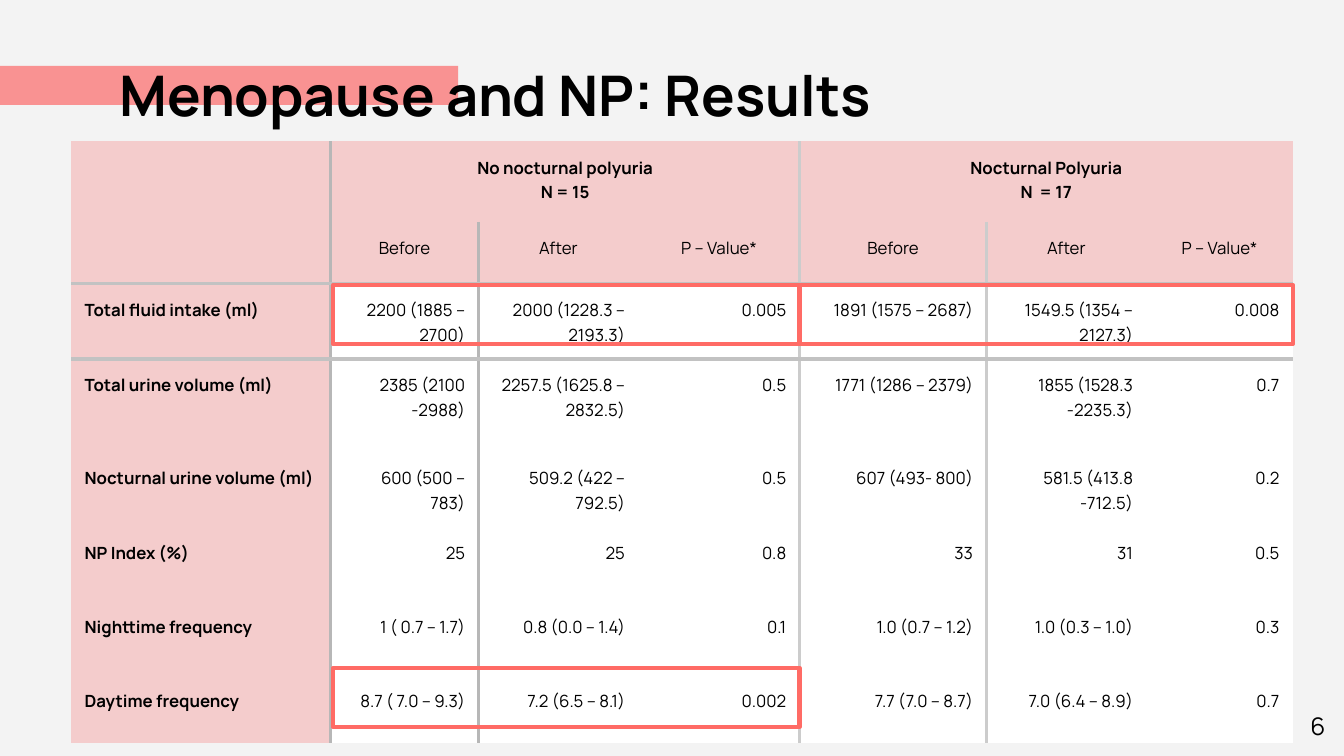
import pptx
import pptx.dml.color
import pptx.enum.shapes
import pptx.enum.text
import pptx.oxml
import pptx.oxml.ns
import pptx.util
from pptx.util import Inches

COLORS = {
    "background": "F3F3F3", "accent": "FF3D3D", "text": "000000",
    "label": "F4CCCC", "value": "FFFFFF", "highlight": "FF6B65",
    "left_rule": "B7B7B7", "right_rule": "CCCCCC", "row_rule": "C2C2C2",
}
FONT = "Manrope"
ALIGN = pptx.enum.text.PP_ALIGN
ANCHOR = pptx.enum.text.MSO_ANCHOR
COLUMN_WIDTHS = [1.93, 1.1, 1.19, 1.2, 1.39, 1.19, 1.09]
ROW_HEIGHTS = [0.6, 0.46, 0.56, 0.69, 0.56, 0.55, 0.55, 0.51]
RESULTS = [
    ["", "No nocturnal polyuria\nN = 15", "", "", "Nocturnal Polyuria\nN  = 17", "", ""],
    [""] + ["Before", "After", "P – Value*"] * 2,
    ["Total fluid intake (ml)", "2200 (1885 – 2700)", "2000 (1228.3 – 2193.3)", "0.005",
     "1891 (1575 – 2687)", "1549.5 (1354 – 2127.3)", "0.008"],
    ["Total urine volume (ml)", "2385 (2100 -2988)", "2257.5 (1625.8 – 2832.5)", "0.5",
     "1771 (1286 – 2379)", "1855 (1528.3 -2235.3)", "0.7"],
    ["Nocturnal urine volume (ml)", "600 (500 – 783)", "509.2 (422 – 792.5)", "0.5",
     "607 (493- 800)", "581.5 (413.8 -712.5)", "0.2"],
    ["NP Index (%)", "25", "25", "0.8", "33", "31", "0.5"],
    ["Nighttime frequency", "1 ( 0.7 – 1.7)", "0.8 (0.0 – 1.4)", "0.1",
     "1.0 (0.7 – 1.2)", "1.0 (0.3 – 1.0)", "0.3"],
    ["Daytime frequency", "8.7 ( 7.0 – 9.3)", "7.2 (6.5 – 8.1)", "0.002",
     "7.7 (7.0 – 8.7)", "7.0 (6.4 – 8.9)", "0.7"],
]
COLUMN_RULES = {0: "left_rule", 3: "right_rule"}
ROW_RULES = {1: "row_rule"}


def rgb(name):
    return pptx.dml.color.RGBColor.from_string(COLORS[name])


def write(frame, text, size, bold=False, align=ALIGN.LEFT, spacing=None):
    frame.text = text
    frame.word_wrap = True
    for paragraph in frame.paragraphs:
        paragraph.alignment = align
        paragraph.line_spacing = spacing
        for run in paragraph.runs:
            run.font.name = FONT
            run.font.size = pptx.util.Pt(size)
            run.font.bold = bold
            run.font.color.rgb = rgb("text")


def add_text(slide, box, text, size, bold=False, align=ALIGN.LEFT, anchor=ANCHOR.TOP):
    frame = slide.shapes.add_textbox(*map(Inches, box)).text_frame
    frame.margin_left = frame.margin_right = Inches(0.1)
    frame.margin_top = frame.margin_bottom = Inches(0.1)
    frame.vertical_anchor = anchor
    write(frame, text, size, bold, align)


def add_rectangle(slide, box):
    rectangle = slide.shapes.add_shape(
        pptx.enum.shapes.MSO_SHAPE.RECTANGLE, *map(Inches, box))
    rectangle.shadow.inherit = False
    return rectangle


def add_accent_bar(slide, box):
    bar = add_rectangle(slide, box)
    bar.fill.solid()
    bar.fill.fore_color.rgb = rgb("accent")
    bar.line.fill.background()
    color = bar._element.spPr.find(".//" + pptx.oxml.ns.qn("a:srgbClr"))
    color.append(pptx.oxml.parse_xml(
        f'<a:alpha {pptx.oxml.ns.nsdecls("a")} val="53000"/>'))


def add_highlight(slide, box):
    highlight = add_rectangle(slide, box)
    highlight.fill.background()
    highlight.line.color.rgb = rgb("highlight")
    highlight.line.width = pptx.util.Pt(2.25)


def add_border(cell, side, color):
    cell._tc.get_or_add_tcPr().append(pptx.oxml.parse_xml(
        f'<a:ln{side} {pptx.oxml.ns.nsdecls("a")} w="{pptx.util.Pt(2.25)}"><a:solidFill>'
        f'<a:srgbClr val="{COLORS[color]}"/></a:solidFill></a:ln{side}>'))


def shrink_empty(cell, size):
    paragraph = cell.text_frame.paragraphs[0]
    paragraph._p.append(pptx.oxml.parse_xml(
        f'<a:endParaRPr {pptx.oxml.ns.nsdecls("a")} sz="{size * 100}"/>'))


def format_cell(cell, row, column, text):
    is_label = row < 2 or column == 0
    cell.margin_left = cell.margin_right = Inches(0.1)
    cell.margin_top = cell.margin_bottom = Inches(0.1)
    bottom_row = 1 if (row, column) == (0, 0) else row
    borders = {
        "L": COLUMN_RULES.get(column - 1),
        "R": COLUMN_RULES.get(2 + column if row == 0 and column == 1 else column),
        "T": ROW_RULES.get(row - 1),
        "B": ROW_RULES.get(bottom_row),
    }
    for side, color in borders.items():
        if color:
            add_border(cell, side, color)
    cell.fill.solid()
    cell.fill.fore_color.rgb = rgb("label" if is_label else "value")
    if text:
        align = ALIGN.CENTER if row < 2 else ALIGN.LEFT if column == 0 else ALIGN.RIGHT
        write(cell.text_frame, text, 9, row == 0 or column == 0, align, 1.07)
    else:
        shrink_empty(cell, 9)


def add_results_table(slide):
    table = slide.shapes.add_table(
        len(ROW_HEIGHTS), len(COLUMN_WIDTHS), Inches(0.53), Inches(1.05),
        Inches(sum(COLUMN_WIDTHS)), Inches(sum(ROW_HEIGHTS))).table
    table.first_row = table.horz_banding = False
    style = table._tbl.tblPr.find(pptx.oxml.ns.qn("a:tableStyleId"))
    style.text = "{2D5ABB26-0587-4C30-8999-92F81FD0307C}"
    for column, width in zip(table.columns, COLUMN_WIDTHS):
        column.width = Inches(width)
    for row, height in zip(table.rows, ROW_HEIGHTS):
        row.height = Inches(height)
    table.cell(0, 0).merge(table.cell(1, 0))
    for first in (1, 4):
        table.cell(0, first).merge(table.cell(0, first + 2))
    for row, texts in enumerate(RESULTS):
        for column, text in enumerate(texts):
            format_cell(table.cell(row, column), row, column, text)


def main():
    deck = pptx.Presentation()
    deck.slide_width = Inches(10)
    deck.slide_height = deck.slide_width * 9 // 16
    slide = deck.slides.add_slide(deck.slide_layouts[6])
    slide.background.fill.solid()
    slide.background.fill.fore_color.rgb = rgb("background")

    add_accent_bar(slide, (0, 0.49, 3.41, 0.29))
    add_text(slide, (0.79, 0.22, 9.02, 0.83), "Menopause and NP: Results", 30,
             bold=True, anchor=ANCHOR.BOTTOM)
    add_text(slide, (9.36, 5.19, 0.6, 0.43), "6", 13, align=ALIGN.RIGHT)
    add_results_table(slide)
    for left, top, width in ((2.48, 2.12, 3.47), (2.48, 4.97, 3.47), (5.95, 2.12, 3.67)):
        add_highlight(slide, (left, top, width, 0.44))
    deck.save("out.pptx")


if __name__ == "__main__":
    main()
